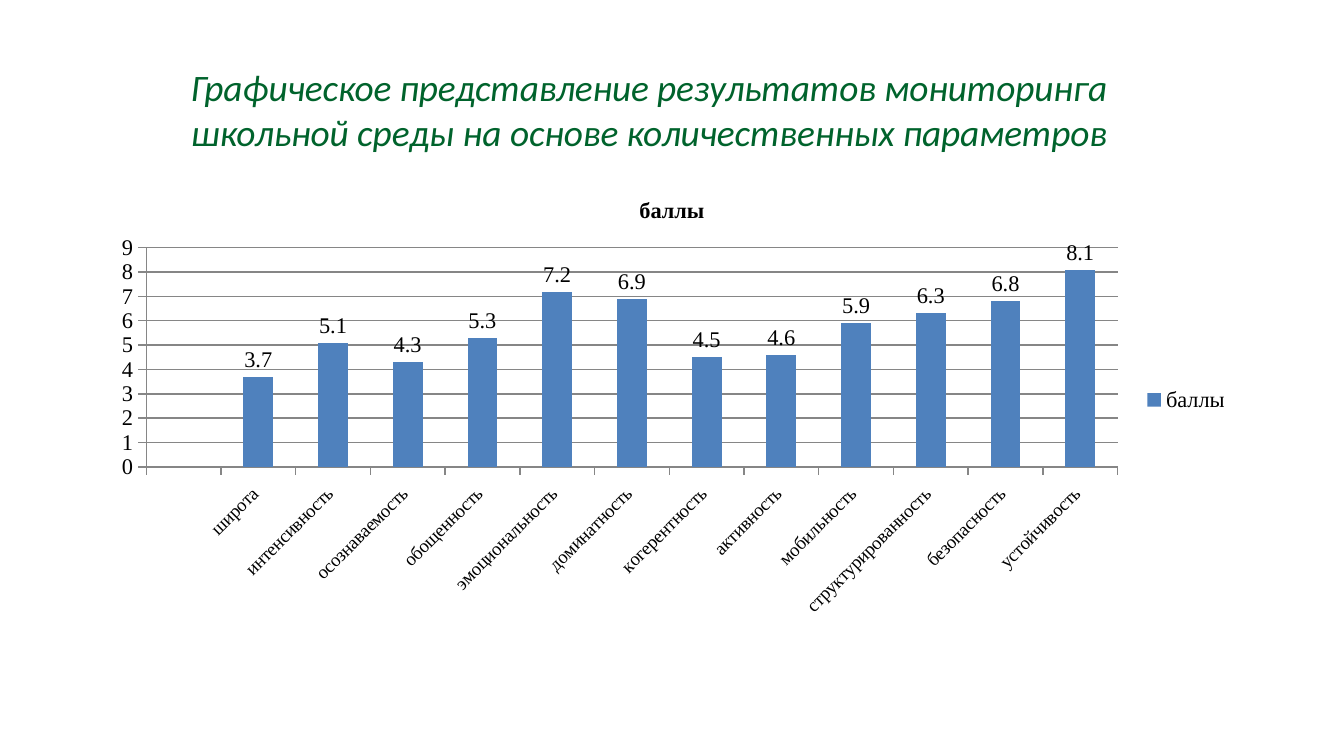
from lxml import etree
from pptx import Presentation
from pptx import util as u
from pptx.chart.data import CategoryChartData
from pptx.dml.color import RGBColor
from pptx.enum import chart as charts
from pptx.enum import text
from pptx.oxml import ns

GREEN = RGBColor(0x00, 0x63, 0x2C)
BLUE = RGBColor(0x4F, 0x81, 0xBD)
GRAY = RGBColor(0x86, 0x86, 0x86)
BLACK = RGBColor(0, 0, 0)

# Each part of the title with its letter spacing in hundredths of a point.
TITLE = [
    ("Графическое представление результатов мониторинга школьной ", -10),
    ("среды на ", 0),
    ("основе количественных параметров", -10),
]
SERIES_NAME = "баллы"
SCORES = {
    "": None,
    "широта ": 3.7,
    "интенсивность ": 5.1,
    "осознаваемость ": 4.3,
    "обощенность ": 5.3,
    "эмоциональность ": 7.2,
    "доминатность ": 6.9,
    "когерентность ": 4.5,
    "активность ": 4.6,
    "мобильность ": 5.9,
    "структурированность ": 6.3,
    "безопасность ": 6.8,
    "устойчивость ": 8.1,
}


class SlideBuilder:
    title_font = "Calibri"
    chart_font = "Times New Roman"

    def __init__(self, slide):
        self.slide = slide

    def title(self, parts, left, top, width, height):
        box = self.slide.shapes.add_textbox(
            u.Cm(left), u.Cm(top), u.Cm(width), u.Cm(height))
        frame = box.text_frame
        frame.word_wrap = True
        frame.vertical_anchor = text.MSO_ANCHOR.TOP
        frame.margin_left = frame.margin_right = 0
        frame.margin_top = frame.margin_bottom = 0
        for words, spacing in parts:
            run = frame.paragraphs[0].add_run()
            run.text = words
            run.font.name = self.title_font
            run.font.size = u.Pt(20)
            run.font.italic = True
            run.font.color.rgb = GREEN
            run._r.get_or_add_rPr().set("spc", str(spacing))

    def column_chart(self, name, scores, left, top, width, height):
        data = CategoryChartData()
        data.categories = list(scores)
        data.add_series(name, list(scores.values()))
        chart = self.slide.shapes.add_chart(
            charts.XL_CHART_TYPE.COLUMN_CLUSTERED,
            u.Cm(left), u.Cm(top), u.Cm(width), u.Cm(height), data).chart
        chart.font.name = self.chart_font
        chart.font.size = u.Pt(12)
        chart.font.color.rgb = BLACK

        chart.has_title = True
        chart.chart_title.text_frame.text = name
        title_font = chart.chart_title.text_frame.paragraphs[0].runs[0].font
        title_font.name = self.chart_font
        title_font.size = u.Pt(12)
        title_font.bold = True
        title_font.color.rgb = BLACK

        chart.has_legend = True
        chart.legend.position = charts.XL_LEGEND_POSITION.RIGHT
        chart.legend.include_in_layout = False

        plot = chart.plots[0]
        plot.gap_width = 150
        plot.vary_by_categories = False
        fill = plot.series[0].format.fill
        fill.solid()
        fill.fore_color.rgb = BLUE
        plot.has_data_labels = True
        plot.data_labels.show_value = True
        plot.data_labels.position = charts.XL_LABEL_POSITION.OUTSIDE_END

        self.axes(chart)
        self.plot_layout(chart, x=0.04, y=0.16, w=0.85, h=0.49)

    def axes(self, chart):
        categories, values = chart.category_axis, chart.value_axis
        values.minimum_scale, values.maximum_scale = 0, 9
        values.major_unit = 1
        values.has_major_gridlines = True
        for line in (categories.format.line, values.format.line,
                     values.major_gridlines.format.line):
            line.color.rgb = GRAY
            line.width = u.Pt(0.75)
        for axis, size, rotation in ((categories, 10, -45), (values, 12, 0)):
            axis.major_tick_mark = charts.XL_TICK_MARK.OUTSIDE
            font = axis.tick_labels.font
            font.name = self.chart_font
            font.size = u.Pt(size)
            font.color.rgb = BLACK
            body = axis._element.find(ns.qn("c:txPr")).find(ns.qn("a:bodyPr"))
            body.set("rot", str(rotation * 60000))
            body.set("vert", "horz")

    def plot_layout(self, chart, **fractions):
        """Place the inner plot area by fractions of the chart's size."""
        area = chart._chartSpace.chart.plotArea
        for old in area.findall(ns.qn("c:layout")):
            area.remove(old)
        layout = etree.Element(ns.qn("c:layout"))
        area.insert(0, layout)
        manual = etree.SubElement(layout, ns.qn("c:manualLayout"))
        settings = {"layoutTarget": "inner", "xMode": "edge", "yMode": "edge",
                    **fractions}
        for tag, value in settings.items():
            etree.SubElement(manual, ns.qn(f"c:{tag}")).set("val", str(value))


def main():
    presentation = Presentation()
    presentation.slide_width = u.Cm(25.4)
    presentation.slide_height = u.Cm(14.29)
    slide = presentation.slides.add_slide(presentation.slide_layouts[6])
    builder = SlideBuilder(slide)
    builder.title(TITLE, 3.61, 1.22, 19.48, 1.7)
    builder.column_chart(SERIES_NAME, SCORES, 1.9, 3.33, 21.6, 8.46)
    presentation.save("out.pptx")


if __name__ == "__main__":
    main()
